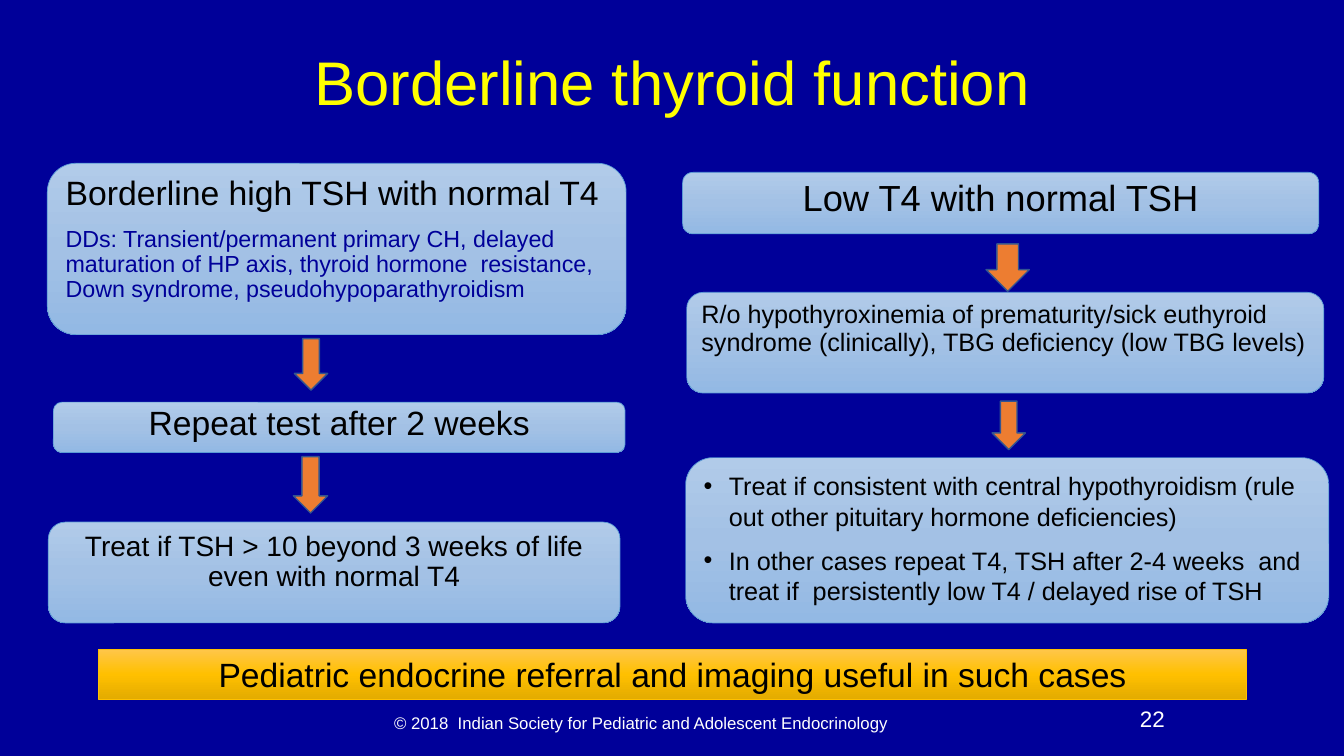
from copy import deepcopy
from dataclasses import dataclass, field
from typing import Any

from lxml.etree import SubElement
from pptx import Presentation
from pptx.dml.color import RGBColor
from pptx.enum.shapes import MSO_SHAPE as Preset
from pptx.enum.text import MSO_ANCHOR as Anchor, PP_ALIGN as Align
from pptx.oxml.ns import qn
from pptx.util import Inches, Pt

NAVY, YELLOW, WHITE, BLACK = "000099", "FFFF00", "FFFFFF", "000000"
BLUE_SHADES = ("B1CBE9", "A3C1E5", "93B9E4")
GOLD_SHADES = ("FFC64B", "FFC000", "E3AB00")
BLUE_EDGE, GOLD_EDGE = "5B9BD5", "FFC000"
ARROW_FILL, ARROW_EDGE = "ED7D31", "325491"
BULLET_INDENT = Inches(0.25)

Place = tuple[float, float, float, float]


@dataclass
class Line:
    text: str
    size: float
    color: str = BLACK
    bullet: bool = False
    style: dict[str, Any] = field(default_factory=dict)


@dataclass
class Panel:
    place: Place
    lines: list[Line]
    preset: Preset = Preset.ROUNDED_RECTANGLE
    shades: tuple[str, ...] = BLUE_SHADES
    edge: str = BLUE_EDGE


@dataclass
class Label:
    place: Place
    line: Line
    anchor: Anchor = Anchor.MIDDLE


CENTER = {"alignment": Align.CENTER}
CENTER_TIGHT = {"alignment": Align.CENTER, "line_spacing": 0.9}
LEFT_TIGHT = {"alignment": Align.LEFT, "line_spacing": 0.9}
LEFT = {"alignment": Align.LEFT}

PANELS = [
    Panel((0.47, 1.62, 5.74, 1.7), [
        Line("Borderline high TSH with normal T4", 24.1, style=LEFT_TIGHT),
        Line("DDs: Transient/permanent primary CH, delayed maturation of HP axis, "
             "thyroid hormone  resistance, Down syndrome, pseudohypoparathyroidism",
             16.6, NAVY, style=LEFT_TIGHT),
    ]),
    Panel((0.53, 3.99, 5.67, 0.5), [
        Line("Repeat test after 2 weeks", 24,
             style={"alignment": Align.CENTER, "line_spacing": 0.8}),
    ]),
    Panel((0.48, 5.18, 5.67, 1), [
        Line("Treat if TSH > 10 beyond 3 weeks of life even with normal T4", 20,
             style=CENTER_TIGHT),
    ]),
    Panel((6.77, 1.71, 6.31, 0.61), [
        Line("Low T4 with normal TSH", 25.9, style=CENTER_TIGHT),
    ]),
    Panel((6.81, 2.9, 6.32, 1), [
        Line("R/o hypothyroxinemia of prematurity/sick euthyroid syndrome "
             "(clinically), TBG deficiency (low TBG levels)", 18, style=LEFT_TIGHT),
    ]),
    Panel((6.8, 4.54, 6.38, 1.64), [
        Line("Treat if consistent with central hypothyroidism (rule out other "
             "pituitary hormone deficiencies)", 18, bullet=True, style=LEFT),
        Line("In other cases repeat T4, TSH after 2-4 weeks  and treat if  "
             "persistently low T4 / delayed rise of TSH", 18, bullet=True, style=LEFT),
    ]),
    Panel((0.98, 6.44, 11.38, 0.5), [
        Line("Pediatric endocrine referral and imaging useful in such cases", 24,
             style=CENTER),
    ], Preset.RECTANGLE, GOLD_SHADES, GOLD_EDGE),
]

ARROWS: list[Place] = [
    (2.92, 3.36, 0.33, 0.51),
    (2.91, 4.53, 0.34, 0.56),
    (9.78, 2.42, 0.43, 0.47),
    (9.84, 3.98, 0.33, 0.48),
]

LABELS = [
    Label((0.92, 0.12, 11.5, 1.45),
          Line("Borderline thyroid function", 44, YELLOW, style=CENTER_TIGHT)),
    Label((3.77, 6.95, 5.18, 0.45),
          Line("© 2018  Indian Society for Pediatric and Adolescent Endocrinology",
               12, WHITE, style=CENTER)),
    Label((9.93, 6.95, 3, 0.4), Line("22", 16, WHITE, style=CENTER), Anchor.TOP),
]


def rgb(color: str) -> RGBColor:
    return RGBColor.from_string(color)


def inches(place: Place) -> list[Inches]:
    return [Inches(length) for length in place]


def apply(target: Any, values: dict[str, Any]) -> None:
    """Set each named attribute of target."""
    for name, value in values.items():
        setattr(target, name, value)


def add_bullet(paragraph: Any) -> None:
    properties = paragraph._p.get_or_add_pPr()
    properties.set("marL", str(BULLET_INDENT))
    properties.set("indent", str(-BULLET_INDENT))
    SubElement(properties, qn("a:buFont")).set("typeface", "Arial")
    SubElement(properties, qn("a:buChar")).set("char", "•")


def write(frame: Any, lines: list[Line], anchor: Anchor) -> None:
    apply(frame, {"word_wrap": True, "vertical_anchor": anchor})
    for index, line in enumerate(lines):
        paragraph = frame.add_paragraph() if index else frame.paragraphs[0]
        if line.bullet:
            add_bullet(paragraph)
        apply(paragraph, line.style | {"space_before": Pt(10 if index else 0)})
        run = paragraph.add_run()
        run.text = line.text
        apply(run.font, {"name": "Arial", "size": Pt(line.size)})
        run.font.color.rgb = rgb(line.color)


def shade(shape: Any, shades: tuple[str, ...]) -> None:
    """Fill from top to bottom with evenly spaced colours."""
    shape.fill.gradient()
    shape.fill.gradient_angle = 270
    stops = shape._element.spPr.find(".//" + qn("a:gsLst"))
    while len(stops) < len(shades):
        stops.append(deepcopy(stops[0]))
    for index, (stop, color) in enumerate(zip(shape.fill.gradient_stops, shades)):
        stop.position = index / (len(shades) - 1)
        stop.color.rgb = rgb(color)


def add_outlined(slide: Any, preset: Preset, place: Place, edge: str, width: float) -> Any:
    shape = slide.shapes.add_shape(preset, *inches(place))
    shape.shadow.inherit = False
    shape.line.color.rgb = rgb(edge)
    shape.line.width = Pt(width)
    return shape


def add_panel(slide: Any, panel: Panel) -> None:
    shape = add_outlined(slide, panel.preset, panel.place, panel.edge, 0.5)
    shade(shape, panel.shades)
    write(shape.text_frame, panel.lines, Anchor.TOP)


def add_arrow(slide: Any, place: Place) -> None:
    arrow = add_outlined(slide, Preset.DOWN_ARROW, place, ARROW_EDGE, 1)
    arrow.fill.solid()
    arrow.fill.fore_color.rgb = rgb(ARROW_FILL)


def add_label(slide: Any, label: Label) -> None:
    box = slide.shapes.add_textbox(*inches(label.place))
    write(box.text_frame, [label.line], label.anchor)


def main() -> None:
    deck = Presentation()
    apply(deck, {"slide_width": Inches(13.33), "slide_height": Inches(7.5)})
    slide = deck.slides.add_slide(deck.slide_layouts[6])
    slide.background.fill.solid()
    slide.background.fill.fore_color.rgb = rgb(NAVY)
    for panel in PANELS:
        add_panel(slide, panel)
    for place in ARROWS:
        add_arrow(slide, place)
    for label in LABELS:
        add_label(slide, label)
    deck.save("out.pptx")


if __name__ == "__main__":
    main()
